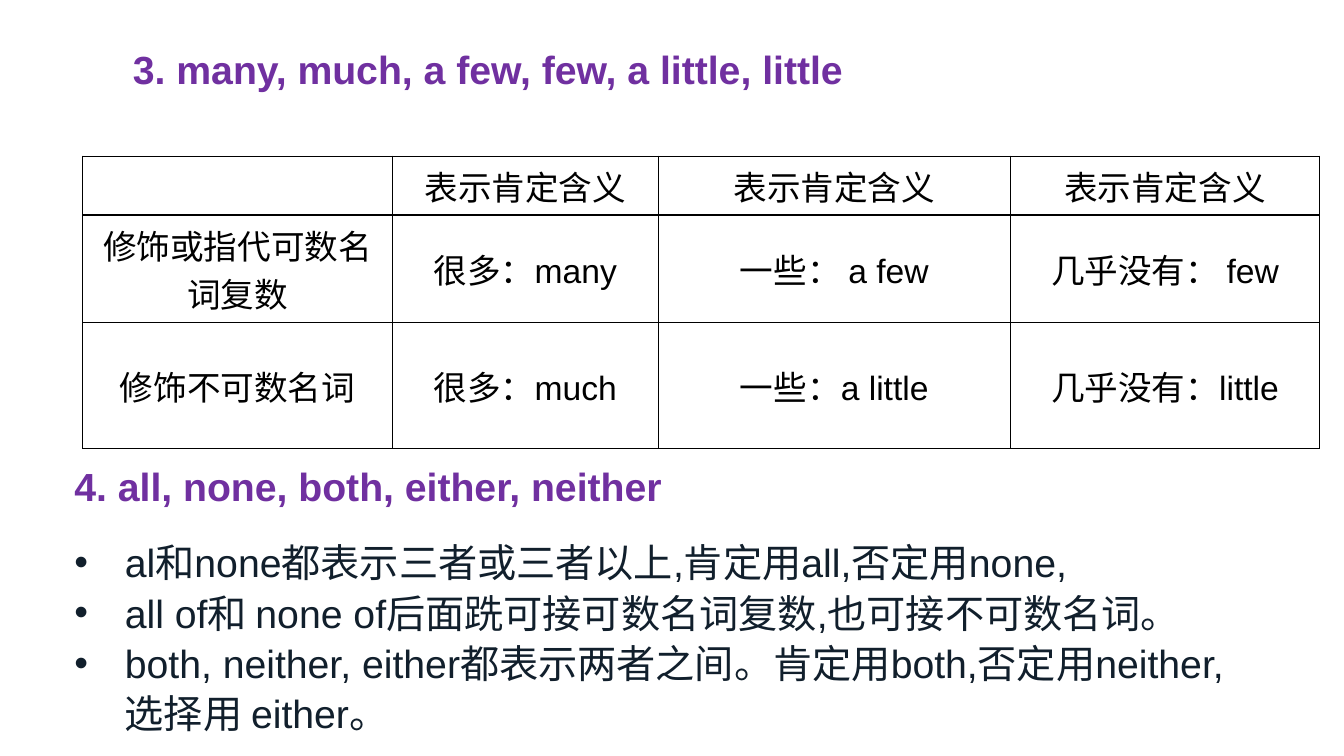
import pptx
import pptx.dml.color
import pptx.enum.text
import pptx.oxml
import pptx.oxml.ns
import pptx.util
from pptx.util import Inches

PURPLE, INK, BLACK = "7030A0", "111F2C", "000000"


def colour(value):
    return pptx.dml.color.RGBColor.from_string(value)


def add_xml(parent, tag, inner="", **attributes):
    listed = "".join(f' {name}="{value}"' for name, value in attributes.items())
    namespace = pptx.oxml.ns.nsdecls("a")
    parent.append(pptx.oxml.parse_xml(f"<a:{tag} {namespace}{listed}>{inner}</a:{tag}>"))


class Builder:
    font_name = "Arial"

    def __init__(self, page):
        self.page = page

    def add_span(self, para, text, size, ink, bold=False):
        span = para.add_run()
        span.text = text
        span.font.name = self.font_name
        span.font.size = pptx.util.Pt(size)
        span.font.bold = bold
        span.font.color.rgb = colour(ink)

    def text_frame(self, left, top, width, height):
        box = self.page.shapes.add_textbox(
            Inches(left), Inches(top), Inches(width), Inches(height))
        frame = box.text_frame
        frame.word_wrap = True
        frame.auto_size = pptx.enum.text.MSO_AUTO_SIZE.SHAPE_TO_FIT_TEXT
        return frame

    def heading(self, left, top, text):
        frame = self.text_frame(left, top, 9.96, 0.57)
        self.add_span(frame.paragraphs[0], text, 28, PURPLE, bold=True)

    def bullets(self, left, top, width, height, lines):
        frame = self.text_frame(left, top, width, height)
        for index, line in enumerate(lines):
            para = frame.add_paragraph() if index else frame.paragraphs[0]
            para.line_spacing = pptx.util.Pt(36)
            properties = para._p.get_or_add_pPr()
            properties.set("marL", str(Inches(0.5)))
            properties.set("indent", str(-Inches(0.5)))
            add_xml(properties, "buFont", typeface=self.font_name)
            add_xml(properties, "buChar", char="•")
            self.add_span(para, line, 28, INK)

    def cell(self, cell, text):
        # Thin black borders on all four sides, no fill
        line = f'<a:solidFill><a:srgbClr val="{BLACK}"/></a:solidFill>'
        for side in ("lnL", "lnR", "lnT", "lnB"):
            add_xml(cell._tc.get_or_add_tcPr(), side, line, w=pptx.util.Pt(1))
        cell.fill.background()
        cell.vertical_anchor = pptx.enum.text.MSO_ANCHOR.MIDDLE
        para = cell.text_frame.paragraphs[0]
        para.alignment = pptx.enum.text.PP_ALIGN.CENTER
        if text:
            self.add_span(para, text, 24, BLACK)

    def table(self, left, top, widths, heights, rows):
        table = self.page.shapes.add_table(
            len(heights), len(widths), Inches(left), Inches(top),
            Inches(sum(widths)), Inches(sum(heights))).table
        table.first_row = table.horz_banding = False
        for column, width in zip(table.columns, widths):
            column.width = Inches(width)
        for row, height, texts in zip(table.rows, heights, rows):
            row.height = Inches(height)
            for cell, text in zip(row.cells, texts):
                self.cell(cell, text)


def main():
    deck = pptx.Presentation()
    deck.slide_width, deck.slide_height = Inches(13.33), Inches(7.5)
    builder = Builder(deck.slides.add_slide(deck.slide_layouts[6]))

    # Quantifier table
    builder.table(0.82, 1.55, [3.07, 2.64, 3.49, 3.07], [0.56, 1.04, 1.25], [
        [""] + ["表示肯定含义"] * 3,
        ["修饰或指代可数名词复数", "很多：many", "一些： a few", "几乎没有： few"],
        ["修饰不可数名词", "很多：much", "一些：a little", "几乎没有：little"],
    ])

    # Section headings
    builder.heading(1.22, 0.4, "3. many, much, a few, few, a little, little")
    builder.heading(0.64, 4.54, "4. all, none, both, either, neither")

    # Usage notes
    builder.bullets(0.64, 5.26, 11.96, 2.12, [
        "al和none都表示三者或三者以上,肯定用all,否定用none,",
        "all of和 none of后面跣可接可数名词复数,也可接不可数名词。",
        "both, neither, either都表示两者之间。肯定用both,否定用neither,选择用 either。",
    ])

    deck.save("out.pptx")


if __name__ == "__main__":
    main()
